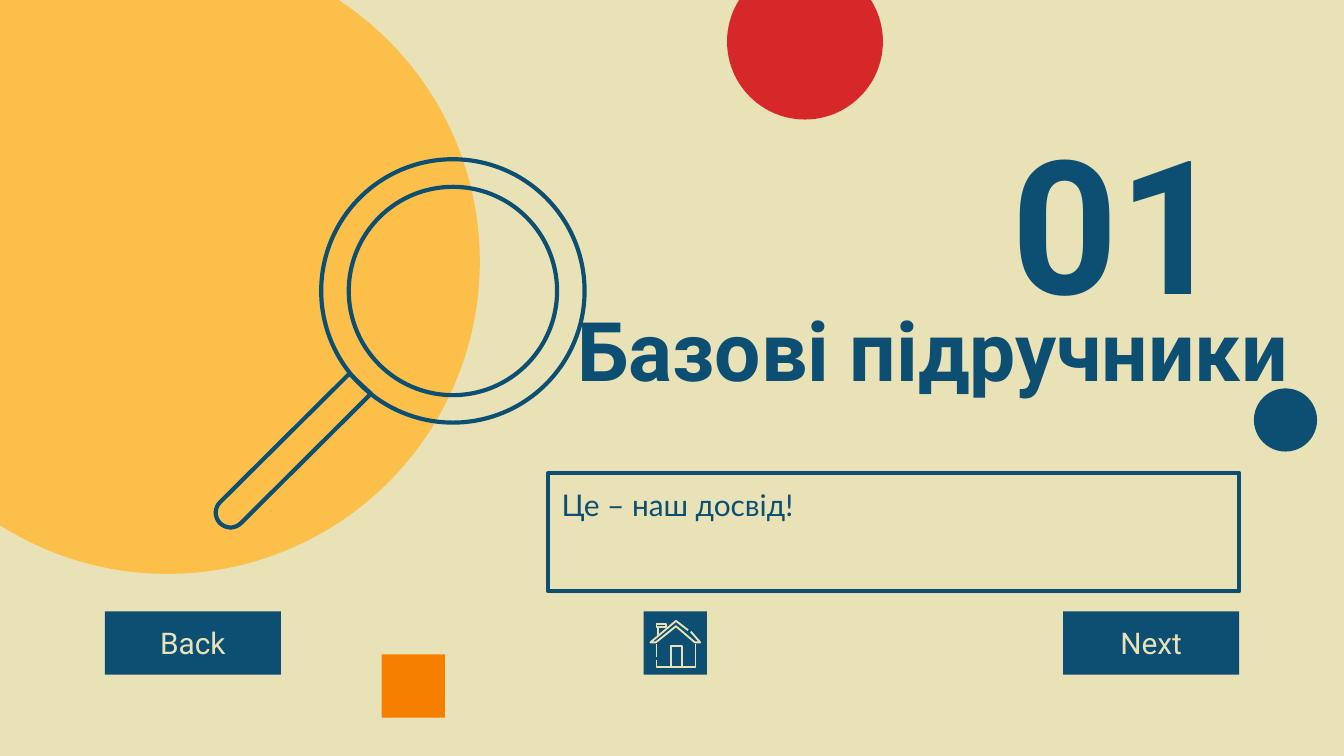
from dataclasses import dataclass
from math import cos, radians, sin
from typing import Optional

from pptx import Presentation
from pptx.dml.color import RGBColor
from pptx.enum.shapes import MSO_SHAPE as Preset
from pptx.enum.text import MSO_ANCHOR as Anchor, MSO_AUTO_SIZE as AutoSize, PP_ALIGN as Align
from pptx.util import Inches, Pt

COLORS = {
    "sand": "EAE2B7",
    "yellow": "FCBF49",
    "navy": "0C4F72",
    "orange": "F77F00",
    "red": "D62828",
}
Point = tuple[float, float]


@dataclass
class Figure:
    preset: Preset
    left: float
    top: float
    width: float
    height: float
    fill: Optional[str] = None
    line: Optional[str] = None


@dataclass
class Label:
    text: str
    size: float
    color: str = "navy"
    font: str = "Roboto"
    bold: bool = False
    align: Align = Align.LEFT
    anchor: Anchor = Anchor.TOP


def rgb(name: str) -> RGBColor:
    return RGBColor.from_string(COLORS[name])


def paint(shape, fill: Optional[str], line: Optional[str], weight: float = 2.25) -> None:
    shape.shadow.inherit = False
    if fill:
        shape.fill.solid()
        shape.fill.fore_color.rgb = rgb(fill)
    else:
        shape.fill.background()
    if line:
        shape.line.color.rgb = rgb(line)
        shape.line.width = Pt(weight)
    else:
        shape.line.fill.background()


def place(shape, left: float, top: float, width: float, height: float) -> None:
    box = {"left": left, "top": top, "width": width, "height": height}
    for name, value in box.items():
        setattr(shape, name, Inches(value))


def write(shape, label: Label) -> None:
    frame = shape.text_frame
    frame_format = {
        "auto_size": AutoSize.NONE,
        "word_wrap": True,
        "vertical_anchor": label.anchor,
    }
    for side in ("left", "top", "right", "bottom"):
        frame_format[f"margin_{side}"] = Inches(0.1)
    for name, value in frame_format.items():
        setattr(frame, name, value)
    paragraph = frame.paragraphs[0]
    paragraph.alignment = label.align
    run = paragraph.add_run()
    run.text = label.text
    font_format = {"name": label.font, "size": Pt(label.size), "bold": label.bold}
    for name, value in font_format.items():
        setattr(run.font, name, value)
    run.font.color.rgb = rgb(label.color)


def draw_figure(slide, figure: Figure, label: Optional[Label] = None) -> None:
    box = (figure.left, figure.top, figure.width, figure.height)
    shape = slide.shapes.add_shape(figure.preset, *map(Inches, box))
    paint(shape, figure.fill, figure.line)
    if label:
        write(shape, label)


def draw_path(slide, points: list[Point], line: str, weight: float, close: bool = False) -> None:
    start, *rest = [(Inches(x), Inches(y)) for x, y in points]
    builder = slide.shapes.build_freeform(*start)
    builder.add_line_segments(rest, close=close)
    paint(builder.convert_to_shape(), None, line, weight)


def draw_magnifier(slide) -> None:
    center_x, center_y = 3.37, 2.165
    for radius in (0.98, 0.775):
        draw_figure(slide, Figure(Preset.OVAL, center_x - radius, center_y - radius,
                                  2 * radius, 2 * radius, line="navy"))
    grip_x, grip_y, grip_radius = 1.715, 3.815, 0.11
    grip = [(grip_x + grip_radius * cos(radians(angle)),
             grip_y + grip_radius * sin(radians(angle))) for angle in range(45, 226, 10)]
    draw_path(slide, [(2.76, 2.93), *grip, (2.6, 2.78)], "navy", 2.25, close=True)


def draw_house(slide) -> None:
    roof = [(5.12, 4.69), (5.03, 4.62), (4.84, 4.78), (4.88, 4.78),
            (5.03, 4.66), (5.17, 4.78), (5.21, 4.78), (5.14, 4.7)]
    upper_wall = [(4.885, 4.79), (4.885, 4.89)]
    walls = [(4.885, 4.91), (4.885, 4.965), (5.175, 4.965), (5.175, 4.79)]
    door = [(4.99, 4.96), (4.99, 4.81), (5.075, 4.81), (5.075, 4.96)]
    chimney = [(4.895, 4.73), (4.895, 4.665), (4.885, 4.665),
               (4.885, 4.645), (4.955, 4.645), (4.955, 4.665), (4.895, 4.665)]
    for stroke in (roof, upper_wall, walls, door, chimney):
        draw_path(slide, stroke, "sand", 1)


def main() -> None:
    presentation = Presentation()
    presentation.slide_width = Inches(10)
    presentation.slide_height = Inches(10 * 9 / 16)
    slide = presentation.slides.add_slide(presentation.slide_layouts[5])
    slide.background.fill.solid()
    slide.background.fill.fore_color.rgb = rgb("sand")

    title = slide.shapes.title
    place(title, 2.56, 2.18, 7.13, 0.83)
    write(title, Label("Базові підручники", 44, bold=True, align=Align.RIGHT, anchor=Anchor.MIDDLE))

    draw_figure(slide, Figure(Preset.OVAL, -1.08, -0.38, 4.65, 4.65, "yellow"))
    number = slide.shapes.add_textbox(*map(Inches, (4.08, 0.7, 5.14, 1.55)))
    write(number, Label("01", 100, bold=True, align=Align.RIGHT))
    draw_figure(slide, Figure(Preset.RECTANGLE, 4.08, 3.52, 5.14, 0.88, line="navy"),
                Label("Це – наш досвід!", 16, font="Lato"))
    draw_magnifier(slide)

    for figure in (
        Figure(Preset.RECTANGLE, 2.84, 4.87, 0.47, 0.47, "orange"),
        Figure(Preset.OVAL, 5.41, -0.27, 1.16, 1.16, "red"),
        Figure(Preset.OVAL, 9.33, 2.89, 0.47, 0.47, "navy"),
        Figure(Preset.RECTANGLE, 4.79, 4.55, 0.47, 0.47, "navy"),
    ):
        draw_figure(slide, figure)
    draw_house(slide)

    for text, left in (("Back", 0.78), ("Next", 7.91)):
        draw_figure(slide, Figure(Preset.RECTANGLE, left, 4.55, 1.31, 0.47, "navy"),
                    Label(text, 16, "sand", align=Align.CENTER, anchor=Anchor.MIDDLE))

    presentation.save("out.pptx")


if __name__ == "__main__":
    main()
